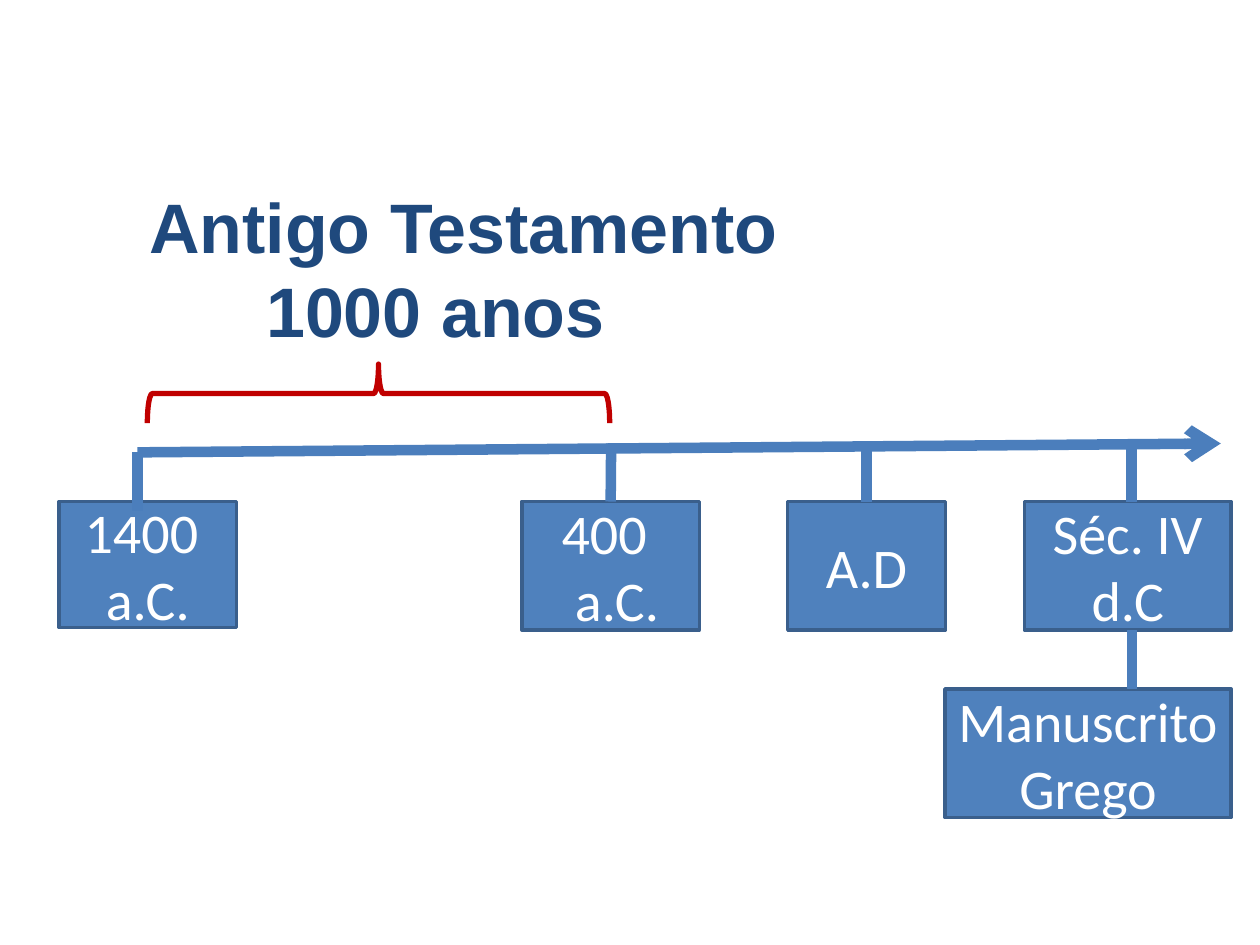
from collections import namedtuple

from lxml.etree import SubElement
from pptx import Presentation
from pptx.dml.color import RGBColor
from pptx.enum.shapes import MSO_CONNECTOR as Connector, MSO_SHAPE as Shape
from pptx.enum.text import MSO_ANCHOR as Anchor, MSO_AUTO_SIZE as AutoSize, PP_ALIGN as Align
from pptx.oxml.ns import qn
from pptx.util import Cm, Pt

WHITE = RGBColor(0xFF, 0xFF, 0xFF)
NAVY = RGBColor(0x1F, 0x49, 0x7D)
BLUE = RGBColor(0x4F, 0x81, 0xBD)
BLUE_EDGE = RGBColor(0x3A, 0x5F, 0x8C)
BLUE_LINE = RGBColor(0x4B, 0x7E, 0xBC)
RED = RGBColor(0xC0, 0x00, 0x00)

Box = namedtuple("Box", "left top width height")
Event = namedtuple("Event", "left width height lines stem_x stem_top stem_bottom centred")

EVENTS = [
    Event(0, 3.58, 2.54, ["1400 ", "a.C."], 1.58, 0.18, 1.37, False),
    Event(9.33, 3.58, 2.59, ["400 ", " a.C."], 11.13, 0, 1.17, True),
    Event(14.69, 3.18, 2.59, ["A.D"], 16.28, 0, 1.17, True),
    Event(19.46, 4.17, 2.59, ["Séc. IV", "d.C"], 21.62, 0, 1.17, False),
]
EVENT_TOP = 1.17


def write_text(frame, lines, font="Calibri", size=32, color=WHITE, bold=False,
               align=Align.CENTER, anchor=Anchor.MIDDLE, indents=()):
    frame.word_wrap = True
    frame.auto_size = AutoSize.NONE
    frame.vertical_anchor = anchor
    for index, line in enumerate(lines):
        para = frame.paragraphs[0] if index == 0 else frame.add_paragraph()
        para.alignment = align
        if indents:
            properties = para._p.get_or_add_pPr()
            properties.set("marL", str(Cm(indents[index])))
            properties.set("indent", "0")
        span = para.add_run()
        span.text = line
        span.font.name = font
        span.font.size = Pt(size)
        span.font.bold = bold
        span.font.color.rgb = color


def add_figure(page, kind, box, fill, edge, weight):
    figure = page.shapes.add_shape(kind, *(Cm(value) for value in box))
    figure.shadow.inherit = False
    figure.fill.solid()
    figure.fill.fore_color.rgb = fill
    figure.line.color.rgb = edge
    figure.line.width = Pt(weight)
    return figure


def add_label(page, box, lines):
    label = add_figure(page, Shape.RECTANGLE, box, BLUE, BLUE_EDGE, 2)
    write_text(label.text_frame, lines)
    return label


def add_line(page, start_x, start_y, end_x, end_y, arrow=False):
    line = page.shapes.add_connector(
        Connector.STRAIGHT, Cm(start_x), Cm(start_y), Cm(end_x), Cm(end_y))
    line.line.color.rgb = BLUE_LINE
    line.line.width = Pt(6)
    if arrow:
        SubElement(line.line._get_or_add_ln(), qn("a:tailEnd"), type="arrow")
    SubElement(line._element.spPr, qn("a:effectLst"))
    return line


def place_heading(page, box):
    title = page.shapes.title
    title.left, title.top, title.width, title.height = (Cm(value) for value in box)
    write_text(title.text_frame, ["Antigo Testamento", "1000 anos"], font="Arial", size=40,
               color=NAVY, bold=True, align=Align.LEFT, anchor=Anchor.TOP,
               indents=(1.57, 3.92))


def place_brace(page, box):
    left = box.left + (box.width - box.height) / 2
    top = box.top + (box.height - box.width) / 2
    upright = Box(left, top, box.height, box.width)
    brace = add_figure(page, Shape.LEFT_BRACE, upright, WHITE, RED, 3)
    brace.rotation = 90


def place_timeline(page, box):
    add_line(page, box.left + 1.58, box.top + 0.18, box.left + 23.42, box.top, arrow=True)
    for event in EVENTS:
        label = add_label(page, Box(box.left + event.left, box.top + EVENT_TOP,
                                    event.width, event.height), event.lines)
        stem_x = box.left + event.stem_x
        stem = add_line(page, stem_x, box.top + event.stem_top,
                        stem_x, box.top + event.stem_bottom)
        if event.centred:
            stem.end_connect(label, 0)


def place_manuscript(page, box):
    add_label(page, box, ["Manuscrito Grego"])
    stem_x = box.left + 3.77
    add_line(page, stem_x, box.top - 1.19, stem_x, box.top)


def main():
    deck = Presentation()
    deck.slide_width, deck.slide_height = Cm(25.4), Cm(19.05)
    page = deck.slides.add_slide(deck.slide_layouts[5])
    place_heading(page, Box(1.19, 3.58, 14.88, 3.68))
    place_brace(page, Box(2.97, 7.34, 9.32, 1.19))
    place_timeline(page, Box(1.19, 8.94, 23.63, 3.76))
    place_manuscript(page, Box(19.05, 13.89, 5.77, 2.59))
    deck.save("out.pptx")


if __name__ == "__main__":
    main()
